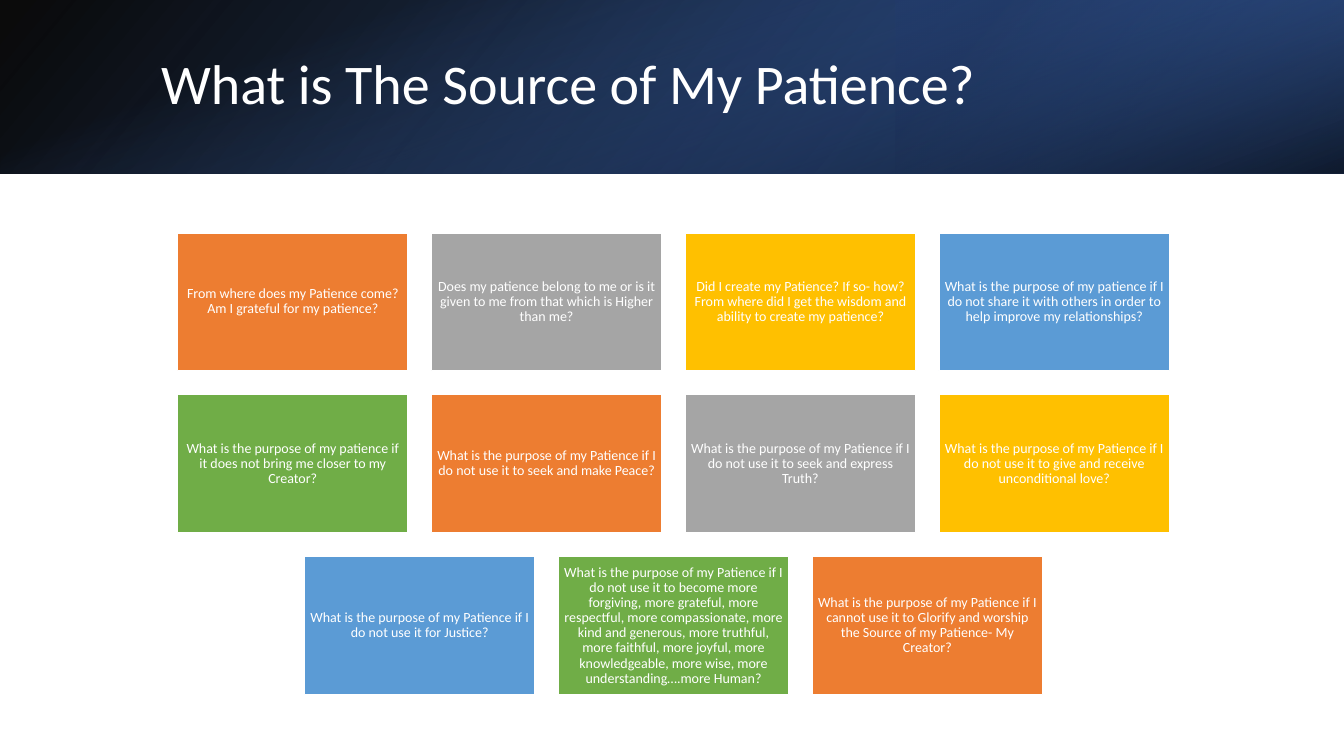
from itertools import cycle

from lxml.etree import SubElement
from pptx import Presentation
from pptx.dml.color import RGBColor
from pptx.enum.shapes import MSO_SHAPE
from pptx.enum.text import MSO_ANCHOR, PP_ALIGN
from pptx.oxml.ns import qn
from pptx.util import Inches, Pt

WIDTH, HEIGHT = 13.33, 7.5
BANNER_HEIGHT = 1.72
WHITE = "FFFFFF"
TILE_COLORS = ["ED7D31", "A5A5A5", "FFC000", "5B9BD5", "70AD47"]
QUESTION_ROWS = [
    [
        "From where does my Patience come? Am I grateful for my patience?",
        "Does my patience belong to me or is it given to me from that which is Higher than me?",
        "Did I create my Patience? If so- how? From where did I get the wisdom and "
        "ability to create my patience?",
        "What is the purpose of my patience if I do not share it with others in order "
        "to help improve my relationships?",
    ],
    [
        "What is the purpose of my patience if it does not bring me closer to my Creator?",
        "What is the purpose of my Patience if I do not use it to seek and make Peace?",
        "What is the purpose of my Patience if I do not use it to seek and express Truth?",
        "What is the purpose of my Patience if I do not use it to give and receive "
        "unconditional love?",
    ],
    [
        "What is the purpose of my Patience if I do not use it for Justice?",
        "What is the purpose of my Patience if I do not use it to become more forgiving, "
        "more grateful, more respectful, more compassionate, more kind and generous, "
        "more truthful, more faithful, more joyful, more knowledgeable, more wise, "
        "more understanding….more Human?",
        "What is the purpose of my Patience if I cannot use it to Glorify and worship "
        "the Source of my Patience- My Creator?",
    ],
]


def color(value):
    return RGBColor.from_string(value)


def add_rectangle(page, left, top, width, height):
    box = page.shapes.add_shape(
        MSO_SHAPE.RECTANGLE, Inches(left), Inches(top), Inches(width), Inches(height)
    )
    box.shadow.inherit = False
    return box


def write(box, text, size):
    frame = box.text_frame
    frame.word_wrap = True
    frame.vertical_anchor = MSO_ANCHOR.MIDDLE
    para = frame.paragraphs[0]
    para.text = text
    para.line_spacing = 0.9
    para.font.name = "Calibri"
    para.font.size = Pt(size)
    para.font.color.rgb = color(WHITE)
    return para


def add_gradient(page, left, top, width, height, stops, angle, rotation=0, flipped=False):
    box = add_rectangle(page, left, top, width, height)
    box.rotation = rotation
    if flipped:
        box.element.spPr.xfrm.set("flipH", "1")
    box.line.fill.background()
    box.fill.gradient()
    box.fill.gradient_angle = 360 - angle
    for stop, (position, shade, _) in zip(box.fill.gradient_stops, stops):
        stop.position = position / 100
        stop.color.rgb = color(shade)
    shades = box.element.xpath(".//a:gs/a:srgbClr")
    for shade, (_, _, opacity) in zip(shades, stops):
        SubElement(shade, qn("a:alpha"), val=str(opacity * 1000))


def add_banner(page, left, top, width, height):
    add_gradient(page, left, top, width, height,
                 [(0, "000000", 96), (100, "2F5597", 100)], 140, flipped=True)
    add_gradient(page, left + width * 2 / 3, top, width / 3, height,
                 [(19, "203864", 68), (100, "4472C4", 79)], 320, 180, True)
    inset = (width - height) / 2
    add_gradient(page, left + inset, top - inset, height, width,
                 [(23, "4472C4", 0), (99, "000000", 74)], 340, 90)
    title = page.shapes.add_textbox(
        Inches(left + 1.5), Inches(top + 0.38), Inches(10.98), Inches(0.96)
    )
    write(title, "What is The Source of My Patience?", 40)


def add_tile(page, left, top, width, height, text, fill):
    tile = add_rectangle(page, left, top, width, height)
    tile.fill.solid()
    tile.fill.fore_color.rgb = color(fill)
    tile.line.color.rgb = color(WHITE)
    tile.line.width = Pt(1)
    frame = tile.text_frame
    frame.margin_left = frame.margin_right = Inches(0.04)
    frame.margin_top = frame.margin_bottom = Inches(0.04)
    write(tile, text, 10).alignment = PP_ALIGN.CENTER


def add_question_grid(page, left, top, width, height):
    column_gap, row_gap = 0.23, 0.24
    tile_width = (width - 3 * column_gap) / 4
    tile_height = (height - 2 * row_gap) / 3
    fills = cycle(TILE_COLORS)
    for row, questions in enumerate(QUESTION_ROWS):
        row_width = len(questions) * (tile_width + column_gap) - column_gap
        row_left = left + (width - row_width) / 2
        row_top = top + row * (tile_height + row_gap)
        for column, question in enumerate(questions):
            tile_left = row_left + column * (tile_width + column_gap)
            add_tile(page, tile_left, row_top, tile_width, tile_height, question, next(fills))


def main():
    deck = Presentation()
    deck.slide_width, deck.slide_height = Inches(WIDTH), Inches(HEIGHT)
    page = deck.slides.add_slide(deck.slide_layouts[6])
    add_banner(page, 0, 0, WIDTH, BANNER_HEIGHT)
    add_question_grid(page, 1.76, 2.31, 9.84, 4.58)
    deck.save("out.pptx")


if __name__ == "__main__":
    main()
